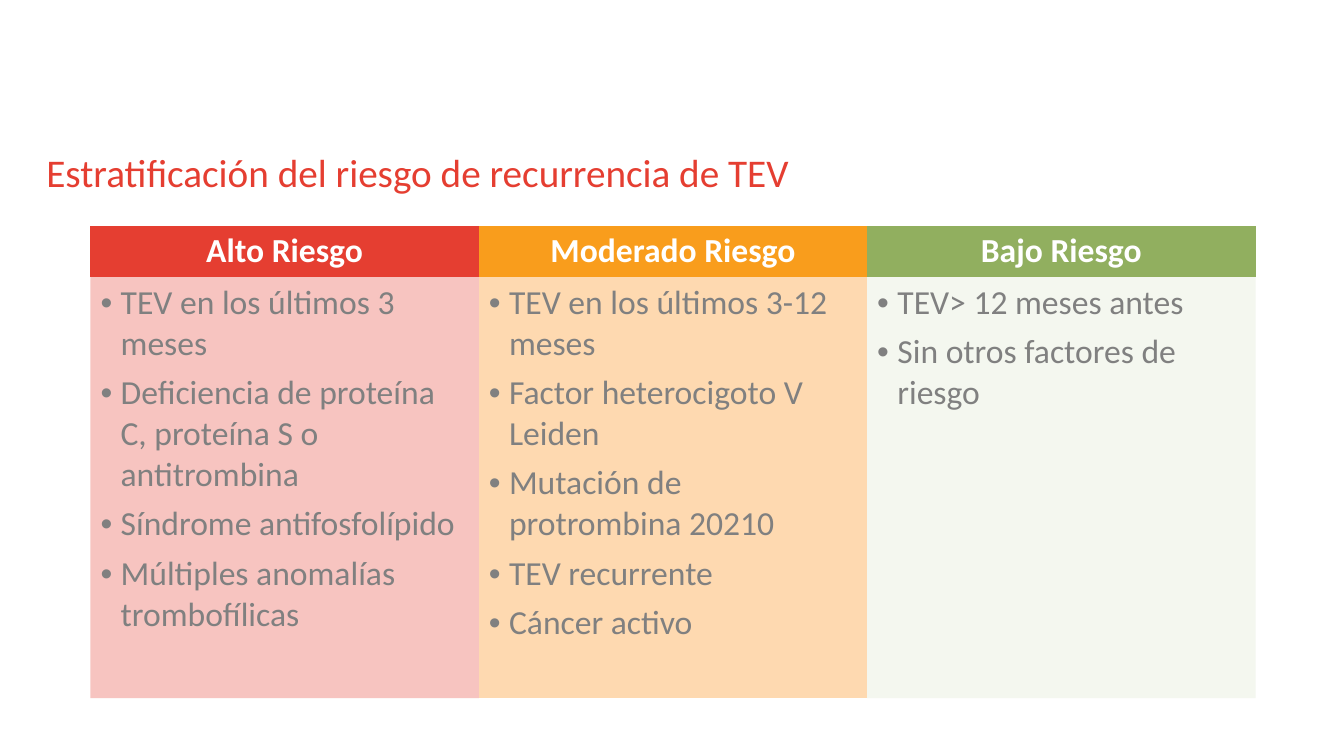
from lxml import etree
from pptx import Presentation
from pptx.dml.color import RGBColor
from pptx.enum.text import MSO_ANCHOR, MSO_AUTO_SIZE, PP_ALIGN
from pptx.oxml.ns import qn
from pptx.util import Pt

TOP, MIDDLE = MSO_ANCHOR.TOP, MSO_ANCHOR.MIDDLE
LEFT, CENTER = PP_ALIGN.LEFT, PP_ALIGN.CENTER
NO_FIT = MSO_AUTO_SIZE.NONE
NO_GRID = "{2D5ABB26-0587-4C30-8999-92F81FD0307C}"

TITLE = "Estratificación del riesgo de recurrencia de TEV"
RISKS = [
    ("Alto Riesgo", "E53E31", "E63E30", 30, [
        "TEV en los últimos 3 meses",
        "Deficiencia de proteína C, proteína S o antitrombina",
        "Síndrome antifosfolípido",
        "Múltiples anomalías trombofílicas",
    ]),
    ("Moderado Riesgo", "F99D1C", "FED9B0", 100, [
        "TEV en los últimos 3-12 meses",
        "Factor heterocigoto V Leiden",
        "Mutación de protrombina 20210",
        "TEV recurrente",
        "Cáncer activo",
    ]),
    ("Bajo Riesgo", "91AF5F", "C9D7AF", 20, [
        "TEV> 12 meses antes",
        "Sin otros factores de riesgo",
    ]),
]
THEME = {
    "title": {"name": "Calibri", "size": Pt(28), "bold": False, "color": "E53E31"},
    "head": {"name": "Calibri", "size": Pt(24), "bold": True, "color": "FFFFFF"},
    "body": {"name": "Calibri", "size": Pt(24), "bold": False, "color": "808080"},
}
COL, HEAD, BODY = 277.4, 36.4, 300.7
INDENT = Pt(14.4)


def put(item, values):
    for name, value in values.items():
        setattr(item, name, value)


def style(para, role, align):
    para.alignment = align
    for name, value in THEME[role].items():
        if name == "color":
            para.font.color.rgb = RGBColor.from_string(value)
        else:
            setattr(para.font, name, value)


def paint(cell, color, alpha=100):
    cell.fill.solid()
    cell.fill.fore_color.rgb = RGBColor.from_string(color)
    if alpha < 100:
        tone = cell.fill._xPr.find(".//" + qn("a:srgbClr"))
        etree.SubElement(tone, qn("a:alpha"), val=str(alpha * 1000))


def bullet(para):
    props = para._p.get_or_add_pPr()
    props.set("marL", str(INDENT))
    props.set("indent", str(-INDENT))
    para.space_after = Pt(6)
    etree.SubElement(props, qn("a:buFont"), typeface="Arial")
    etree.SubElement(props, qn("a:buChar"), char="•")


def add_title(slide):
    title = slide.shapes.title
    put(title, {"left": Pt(33.1), "top": Pt(105.8), "width": Pt(864), "height": Pt(56.2)})
    frame = title.text_frame
    put(frame, {"text": TITLE, "vertical_anchor": TOP, "word_wrap": True,
                "auto_size": NO_FIT, "margin_left": 0, "margin_top": 0,
                "margin_right": 0, "margin_bottom": 0})
    style(frame.paragraphs[0], "title", LEFT)


def add_risks(slide):
    table = slide.shapes.add_table(
        2, len(RISKS), Pt(64.6), Pt(161.4), Pt(COL * len(RISKS)), Pt(HEAD + BODY)
    ).table
    put(table, {"first_row": True, "horz_banding": False})
    table._tbl.tblPr.find(qn("a:tableStyleId")).text = NO_GRID
    for row, height in zip(table.rows, (HEAD, BODY)):
        row.height = Pt(height)
    for col, (name, dark, pale, alpha, items) in enumerate(RISKS):
        table.columns[col].width = Pt(COL)
        head, body = table.cell(0, col), table.cell(1, col)
        put(head, {"text": name, "vertical_anchor": MIDDLE})
        style(head.text_frame.paragraphs[0], "head", CENTER)
        paint(head, dark)
        body.text = "\n".join(items)
        for para in body.text_frame.paragraphs:
            bullet(para)
            style(para, "body", LEFT)
        paint(body, pale, alpha)


def main():
    deck = Presentation()
    put(deck, {"slide_width": Pt(960), "slide_height": Pt(540)})
    slide = deck.slides.add_slide(deck.slide_layouts[5])
    add_title(slide)
    add_risks(slide)
    deck.save("out.pptx")


if __name__ == "__main__":
    main()
